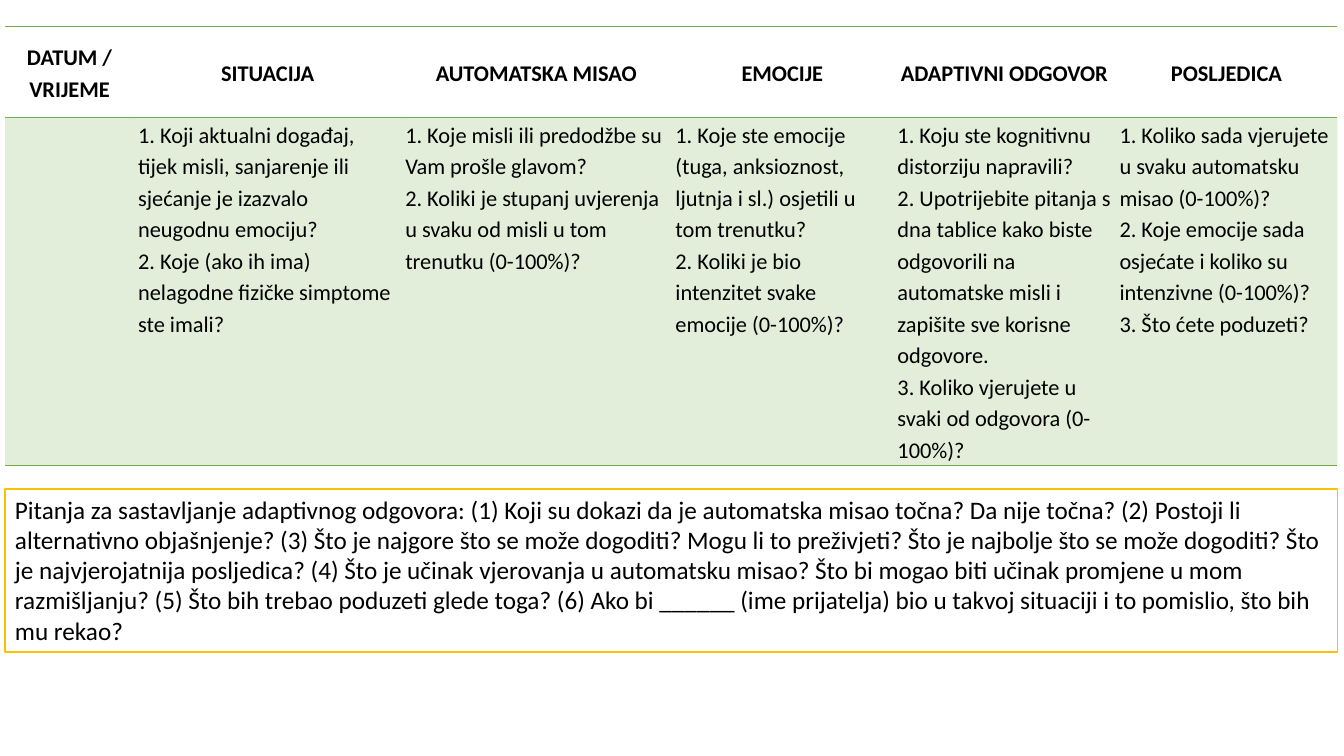
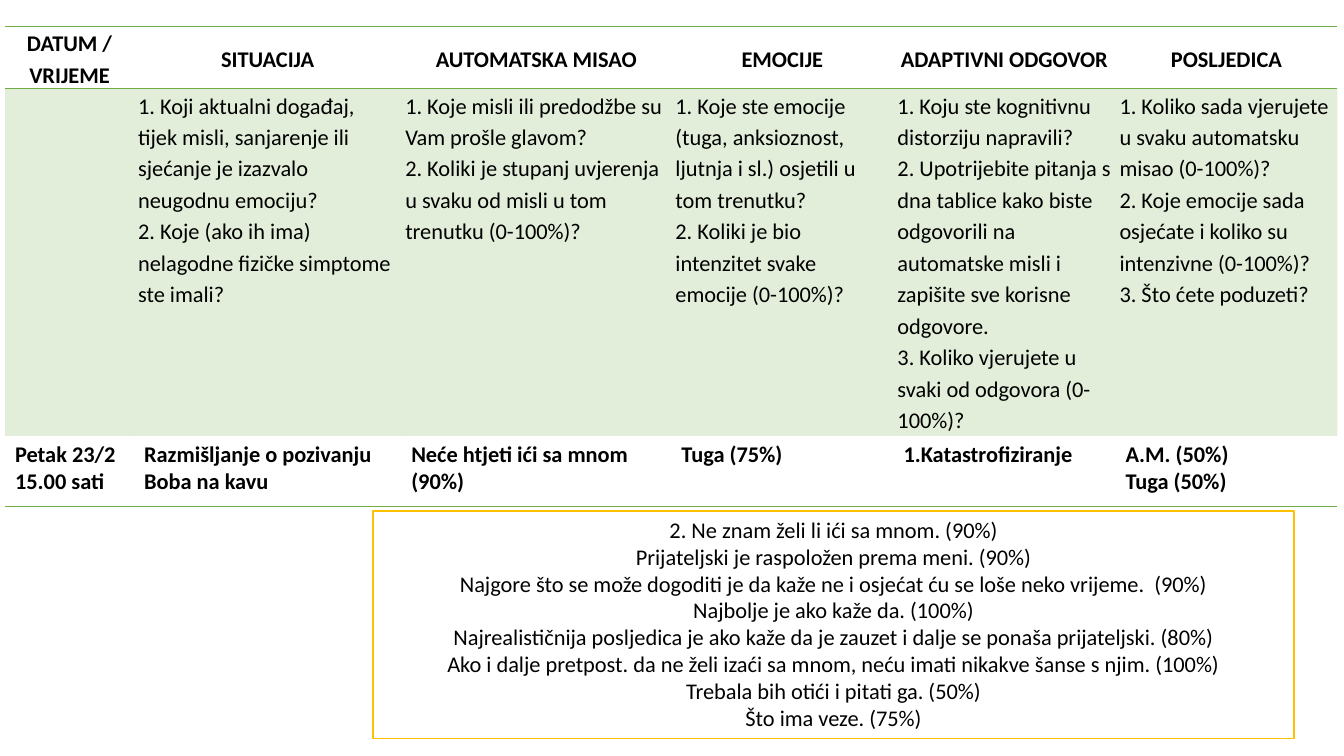
from dataclasses import dataclass

from lxml.etree import SubElement
from pptx import Presentation
from pptx.dml.color import RGBColor as Rgb
from pptx.enum.shapes import MSO_SHAPE as Preset
from pptx.enum.text import MSO_ANCHOR as Anchor, MSO_AUTO_SIZE as AutoSize, PP_ALIGN as Align
from pptx.oxml import parse_xml
from pptx.oxml.ns import nsdecls, qn
from pptx.util import Pt


@dataclass(frozen=True)
class Theme:
    """Colours, type sizes and measures shared by the slides."""
    font: str = "Calibri"
    ink: str = "000000"
    paper: str = "FFFFFF"
    green: str = "70AD47"
    amber: str = "FFC000"
    tint_percent: int = 20
    text_size: int = 16
    note_size: int = 18
    line_width: int = 1
    table_spacing: float = 1.15
    plain_table: str = "{2D5ABB26-0587-4C30-8999-92F81FD0307C}"


@dataclass(frozen=True)
class Box:
    """A region of the slide, in points."""
    left: float
    top: float
    width: float
    height: float

    def lengths(self):
        """Return left, top, width and height as lengths."""
        return Pt(self.left), Pt(self.top), Pt(self.width), Pt(self.height)


THEME = Theme()
COLUMN_WIDTHS = (92.2, 190.8, 193, 158.6, 158.6, 158.6)
RECORD_LEFT, RECORD_TOP, RECORD_WIDTH = 3.6, 18.7, sum(COLUMN_WIDTHS)

HEADINGS = ("DATUM / VRIJEME", "SITUACIJA", "AUTOMATSKA MISAO",
            "EMOCIJE", "ADAPTIVNI ODGOVOR", "POSLJEDICA")
PROMPTS = (
    (),
    ("1. Koji aktualni događaj, tijek misli, sanjarenje ili sjećanje je izazvalo neugodnu emociju?",
     "2. Koje (ako ih ima) nelagodne fizičke simptome ste imali?"),
    ("1. Koje misli ili predodžbe su Vam prošle glavom?",
     "2. Koliki je stupanj uvjerenja u svaku od misli u tom trenutku (0-100%)?"),
    ("1. Koje ste emocije (tuga, anksioznost, ljutnja i sl.) osjetili u tom trenutku?",
     "2. Koliki je bio intenzitet svake emocije (0-100%)?"),
    ("1. Koju ste kognitivnu distorziju napravili?",
     "2. Upotrijebite pitanja s dna tablice kako biste odgovorili na automatske misli "
     "i zapišite sve korisne odgovore.",
     "3. Koliko vjerujete u svaki od odgovora (0-100%)?"),
    ("1. Koliko sada vjerujete u svaku automatsku misao (0-100%)?",
     "2. Koje emocije sada osjećate i koliko su intenzivne (0-100%)?",
     "3. Što ćete poduzeti?"),
)
ENTRY = (
    ("Petak 23/2", "15.00 sati"),
    ("Razmišljanje o pozivanju Boba na kavu",),
    ("Neće htjeti ići sa mnom (90%)",),
    ("Tuga (75%)",),
    ("1.Katastrofiziranje",),
    ("A.M. (50%)", "Tuga (50%)"),
)
QUESTIONS = (
    "Pitanja za sastavljanje adaptivnog odgovora: (1) Koji su dokazi da je automatska misao točna? "
    "Da nije točna? (2) Postoji li alternativno objašnjenje? (3) Što je najgore što se može dogoditi? "
    "Mogu li to preživjeti? Što je najbolje što se može dogoditi? Što je najvjerojatnija posljedica? "
    "(4) Što je učinak vjerovanja u automatsku misao? Što bi mogao biti učinak promjene u mom "
    "razmišljanju? (5) Što bih trebao poduzeti glede toga? (6) Ako bi ______ (ime prijatelja) bio u "
    "takvoj situaciji i to pomislio, što bih mu rekao?",
)
ANSWERS = (
    "2. Ne znam želi li ići sa mnom. (90%)",
    "Prijateljski je raspoložen prema meni. (90%)",
    "Najgore što se može dogoditi je da kaže ne i osjećat ću se loše neko vrijeme.  (90%)",
    "Najbolje je ako kaže da. (100%)",
    "Najrealističnija posljedica je ako kaže da je zauzet i dalje se ponaša prijateljski. (80%)",
    "Ako i dalje pretpost. da ne želi izaći sa mnom, neću imati nikakve šanse s njim. (100%)",
    "Trebala bih otići i pitati ga. (50%)",
    "Što ima veze. (75%)",
)


def write_lines(frame, lines, size, align=Align.LEFT, bold=False, spacing=None):
    """Write each line as one paragraph with one run."""
    for index, line in enumerate(lines):
        paragraph = frame.paragraphs[0] if index == 0 else frame.add_paragraph()
        paragraph.alignment = align
        if spacing:
            paragraph.line_spacing = spacing
        run = paragraph.add_run()
        run.text = line
        run.font.name = THEME.font
        run.font.size = Pt(size)
        run.font.bold = bold
        run.font.color.rgb = Rgb.from_string(THEME.ink)


def rule_cell(cell, edges):
    """Draw green rules on the given cell edges."""
    properties = cell._tc.get_or_add_tcPr()
    for index, edge in enumerate(edges):
        properties.insert(index, parse_xml(
            f'<a:{edge} {nsdecls("a")} w="{Pt(THEME.line_width)}"><a:solidFill>'
            f'<a:srgbClr val="{THEME.green}"/></a:solidFill></a:{edge}>'))


def tint_cell(cell):
    """Fill a cell with transparent green."""
    cell.fill.solid()
    cell.fill.fore_color.rgb = Rgb.from_string(THEME.green)
    colour = cell._tc.tcPr.find(f'{qn("a:solidFill")}/{qn("a:srgbClr")}')
    SubElement(colour, qn("a:alpha"), val=str(THEME.tint_percent * 1000))


def tighten_cell(cell):
    """Give a cell narrow side margins and no vertical ones."""
    cell.margin_left = cell.margin_right = Pt(2.9)
    cell.margin_top = cell.margin_bottom = Pt(0)


def fill_heading(cell, heading):
    """Format a column heading."""
    tighten_cell(cell)
    cell.vertical_anchor = Anchor.MIDDLE
    write_lines(cell.text_frame, (heading,), THEME.text_size, Align.CENTER, True, THEME.table_spacing)
    cell.fill.background()
    rule_cell(cell, ("lnT", "lnB"))


def fill_prompt(cell, prompts):
    """Format a tinted cell of prompts."""
    tighten_cell(cell)
    write_lines(cell.text_frame, prompts, THEME.text_size, spacing=THEME.table_spacing)
    tint_cell(cell)


def fill_entry(cell, lines):
    """Format a cell of the filled-in entry."""
    write_lines(cell.text_frame, lines, THEME.text_size, bold=True)
    cell.fill.background()


def add_record(slide, box, row_heights, entry=None):
    """Place the thought record, with its entry row if there is one."""
    rows = [(fill_heading, HEADINGS), (fill_prompt, PROMPTS)]
    if entry:
        rows.append((fill_entry, entry))
    frame = slide.shapes.add_table(len(rows), len(COLUMN_WIDTHS), *box.lengths())
    record = frame.table
    record.first_row = record.horz_banding = False
    record._tbl.tblPr.find(qn("a:tableStyleId")).text = THEME.plain_table
    for column, width in zip(record.columns, COLUMN_WIDTHS):
        column.width = Pt(width)
    for row, height, (fill_cell, contents) in zip(record.rows, row_heights, rows):
        row.height = Pt(height)
        for cell, content in zip(row.cells, contents):
            fill_cell(cell, content)
    for cell in record.rows[len(rows) - 1].cells:
        rule_cell(cell, ("lnB",))


def add_note(slide, box, lines, size, align):
    """Place a white note with an amber outline."""
    note = slide.shapes.add_shape(Preset.RECTANGLE, *box.lengths())
    note.shadow.inherit = False
    note.fill.solid()
    note.fill.fore_color.rgb = Rgb.from_string(THEME.paper)
    note.line.color.rgb = Rgb.from_string(THEME.amber)
    note.line.width = Pt(THEME.line_width)
    frame = note.text_frame
    frame.word_wrap = True
    frame.auto_size = AutoSize.SHAPE_TO_FIT_TEXT
    frame.vertical_anchor = Anchor.TOP
    write_lines(frame, lines, size, align)


def add_record_slide(deck, row_heights, note_box, note_lines, note_size, note_align, entry=None):
    """Add a slide with a thought record above a note."""
    slide = deck.slides.add_slide(deck.slide_layouts[6])
    record_box = Box(RECORD_LEFT, RECORD_TOP, RECORD_WIDTH, sum(row_heights))
    add_record(slide, record_box, row_heights, entry)
    add_note(slide, note_box, note_lines, note_size, note_align)


def main():
    """Build and save the deck."""
    deck = Presentation()
    deck.slide_width, deck.slide_height = Pt(960), Pt(540)
    add_record_slide(deck, (65.5, 248.4), Box(RECORD_LEFT, 349.2, RECORD_WIDTH, 116.6),
                     QUESTIONS, THEME.note_size, Align.LEFT)
    add_record_slide(deck, (44.6, 248, 50.4), Box(266.4, 365, 658, 162.7),
                     ANSWERS, THEME.text_size, Align.CENTER, ENTRY)
    deck.save("out.pptx")


if __name__ == "__main__":
    main()
